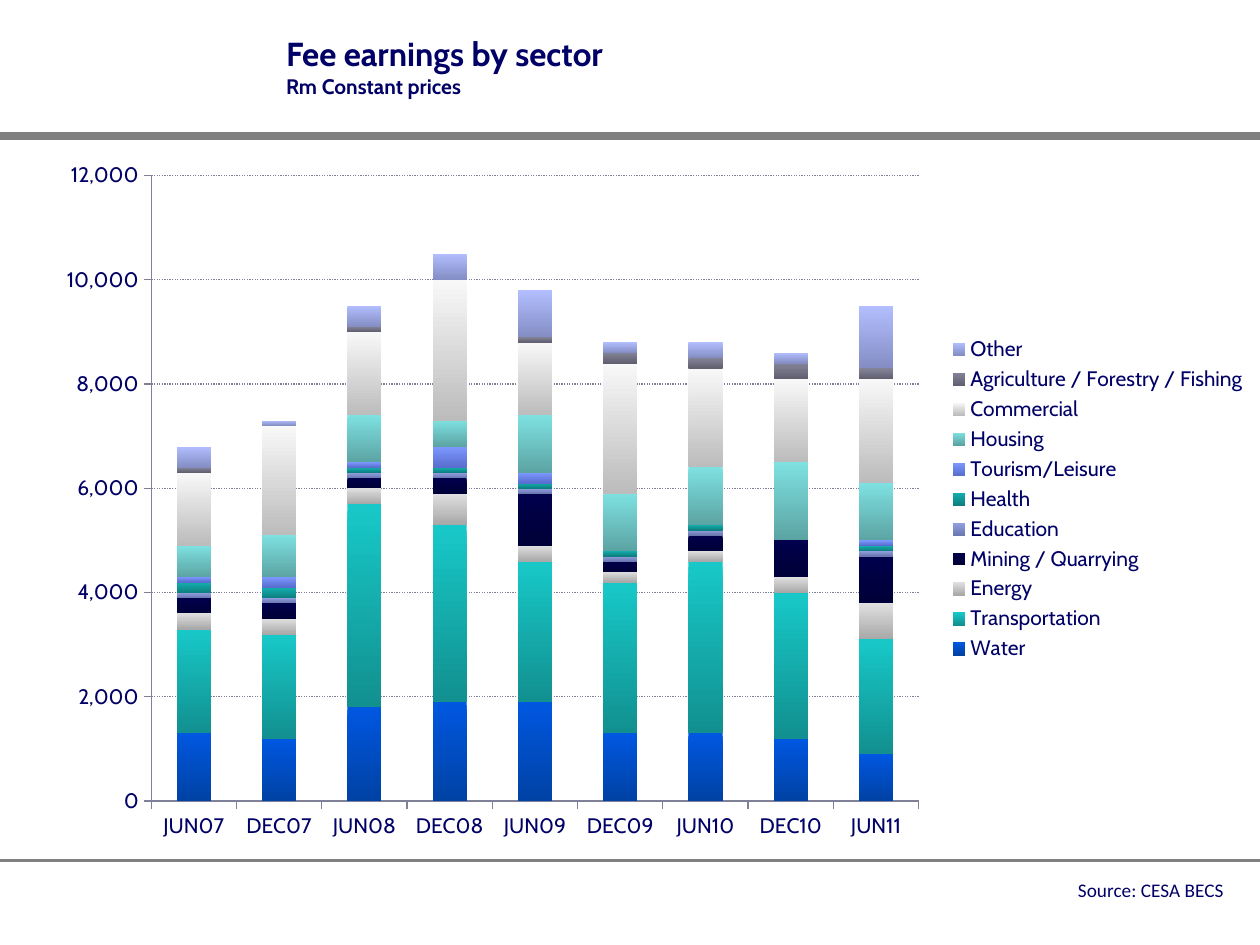
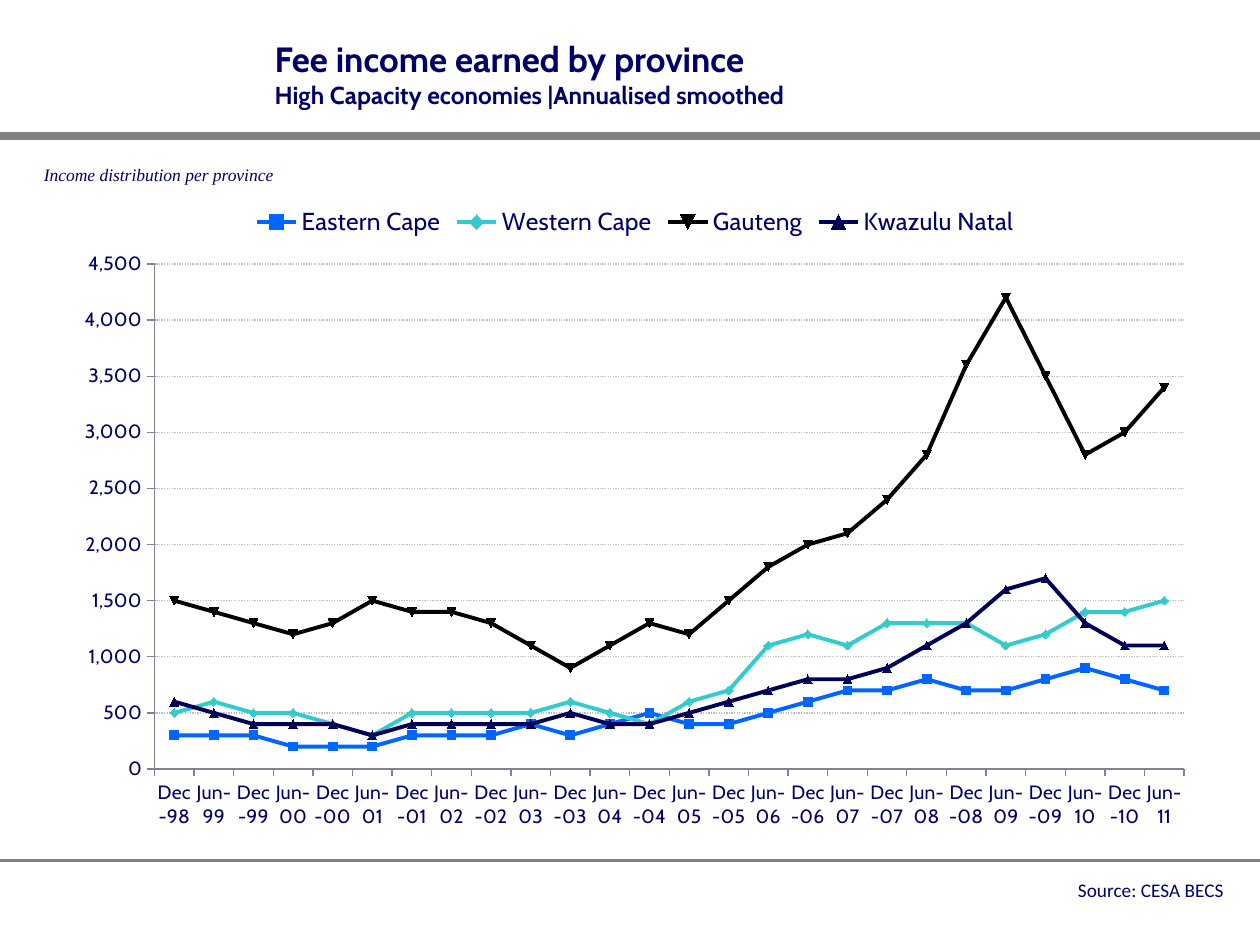
"""Build two slides on consulting fee income, by sector and by province."""
from pptx import Presentation
from pptx.chart.data import CategoryChartData
from pptx.dml.color import RGBColor
from pptx.enum.chart import XL_CHART_TYPE, XL_LEGEND_POSITION, XL_TICK_MARK
from pptx.enum.dml import MSO_LINE
from pptx.enum.shapes import MSO_CONNECTOR
from pptx.enum.text import MSO_ANCHOR, MSO_AUTO_SIZE, PP_ALIGN
from pptx.oxml import parse_xml
from pptx.oxml.ns import nsdecls, qn
from pptx.util import Inches, Pt

STACKED, LINE = XL_CHART_TYPE.COLUMN_STACKED, XL_CHART_TYPE.LINE
LEGEND_RIGHT, LEGEND_TOP = XL_LEGEND_POSITION.RIGHT, XL_LEGEND_POSITION.TOP
TICK_OUTSIDE = XL_TICK_MARK.OUTSIDE
DOTTED = MSO_LINE.ROUND_DOT
STRAIGHT = MSO_CONNECTOR.STRAIGHT
TOP, BOTTOM = MSO_ANCHOR.TOP, MSO_ANCHOR.BOTTOM
FIXED_SIZE = MSO_AUTO_SIZE.NONE
LEFT, RIGHT = PP_ALIGN.LEFT, PP_ALIGN.RIGHT

NAVY = RGBColor(0x00, 0x00, 0x66)
RULE_GREY = RGBColor(0x80, 0x80, 0x80)
AXIS_GREY = RGBColor(0x80, 0x80, 0x99)
GRID_GREY = RGBColor(0xBF, 0xBF, 0xBF)
BLUE = RGBColor(0x00, 0x66, 0xFF)
TEAL = RGBColor(0x33, 0xCC, 0xCC)
BLACK = RGBColor(0x00, 0x00, 0x00)
MIDNIGHT = RGBColor(0x00, 0x00, 0x56)

HEAD_FONT, SOURCE_FONT, NOTE_FONT = "Cabin", "Calibri", "Times New Roman"
TITLE_ONLY = 5
SLIDE_WIDTH, SLIDE_HEIGHT = 10, 7.5
RULES = [(1.08, 5), (6.83, 2)]
SOURCE_BOX = (8.44, 6.92, 1.37, 0.29)

SECTOR_PERIODS = [f"{month}{year:02}" for year in range(7, 12)
                  for month in ("JUN", "DEC")][:-1]
SECTORS = {
    "Water": [1300, 1200, 1800, 1900, 1900, 1300, 1300, 1200, 900],
    "Transportation": [2000, 2000, 3900, 3400, 2700, 2900, 3300, 2800, 2200],
    "Energy": [300, 300, 300, 600, 300, 200, 200, 300, 700],
    "Mining / Quarrying": [300, 300, 200, 300, 1000, 200, 300, 700, 900],
    "Education": [100, 100, 100, 100, 100, 100, 100, 0, 100],
    "Health": [200, 200, 100, 100, 100, 100, 100, 0, 100],
    "Tourism/Leisure": [100, 200, 100, 400, 200, 0, 0, 0, 100],
    "Housing": [600, 800, 900, 500, 1100, 1100, 1100, 1500, 1100],
    "Commercial": [1400, 2100, 1600, 2700, 1400, 2500, 1900, 1600, 2000],
    "Agriculture / Forestry / Fishing": [100, 0, 100, 0, 100, 200, 200, 300, 200],
    "Other": [400, 100, 400, 500, 900, 200, 300, 200, 1200],
}
SECTOR_SHADES = [
    (RGBColor(0x00, 0x57, 0xE0), RGBColor(0x00, 0x42, 0xA4)),
    (RGBColor(0x18, 0xC8, 0xC8), RGBColor(0x12, 0x90, 0x90)),
    (RGBColor(0xE0, 0xE0, 0xE0), RGBColor(0xA8, 0xA8, 0xA8)),
    (RGBColor(0x00, 0x00, 0x4C), RGBColor(0x00, 0x00, 0x38)),
    (RGBColor(0x94, 0xA2, 0xE6), RGBColor(0x6C, 0x78, 0xB0)),
    (RGBColor(0x14, 0xB0, 0xB0), RGBColor(0x0E, 0x80, 0x80)),
    (RGBColor(0x7C, 0x98, 0xFF), RGBColor(0x5A, 0x6E, 0xD0)),
    (RGBColor(0x7E, 0xE0, 0xE0), RGBColor(0x5C, 0xA4, 0xA4)),
    (RGBColor(0xF8, 0xF8, 0xF8), RGBColor(0xBC, 0xBC, 0xBC)),
    (RGBColor(0x84, 0x84, 0x98), RGBColor(0x60, 0x60, 0x70)),
    (RGBColor(0xB2, 0xBE, 0xFF), RGBColor(0x84, 0x8E, 0xC4)),
]

PROVINCE_PERIODS = [f"{month}-{year % 100:02}" for year in range(1998, 2012)
                    for month in ("Jun", "Dec")][1:-1]
PROVINCES = {
    "Eastern Cape": [300, 300, 300, 200, 200, 200, 300, 300, 300, 400, 300, 400, 500,
                     400, 400, 500, 600, 700, 700, 800, 700, 700, 800, 900, 800, 700],
    "Western Cape": [500, 600, 500, 500, 400, 300, 500, 500, 500, 500, 600, 500, 400,
                     600, 700, 1100, 1200, 1100, 1300, 1300, 1300, 1100, 1200, 1400,
                     1400, 1500],
    "Gauteng": [1500, 1400, 1300, 1200, 1300, 1500, 1400, 1400, 1300, 1100, 900, 1100,
                1300, 1200, 1500, 1800, 2000, 2100, 2400, 2800, 3600, 4200, 3500, 2800,
                3000, 3400],
    "Kwazulu Natal": [600, 500, 400, 400, 400, 300, 400, 400, 400, 400, 500, 400, 400,
                      500, 600, 700, 800, 800, 900, 1100, 1300, 1600, 1700, 1300, 1100,
                      1100],
}
PROVINCE_COLOURS = [BLUE, TEAL, BLACK, MIDNIGHT]


def inches(box):
    """Turn a left, top, width, height box into lengths."""
    return [Inches(side) for side in box]


def write_text(para, text, *, size, font=HEAD_FONT, bold=False, italic=False,
               align=LEFT):
    """Add one formatted span of text to a paragraph."""
    para.alignment = align
    span = para.add_run()
    span.text = text
    span.font.name, span.font.size = font, Pt(size)
    span.font.bold, span.font.italic = bold, italic
    span.font.color.rgb = NAVY


def add_label(page, box, text, **text_format):
    """Add a one-line text box."""
    frame = page.shapes.add_textbox(*inches(box)).text_frame
    frame.word_wrap = False
    write_text(frame.paragraphs[0], text, **text_format)


def add_rules(page):
    """Draw the grey rules under the heading and above the source."""
    for height, weight in RULES:
        rule = page.shapes.add_connector(STRAIGHT, *inches((0, height, SLIDE_WIDTH, height)))
        rule.line.color.rgb = RULE_GREY
        rule.line.width = Pt(weight)
        rule.element.spPr.append(parse_xml(f"<a:effectLst {nsdecls('a')}/>"))


def set_title(page, box, lines, anchor):
    """Place the title and write its heading and subheading."""
    title = page.shapes.title
    title.left, title.top, title.width, title.height = inches(box)
    frame = title.text_frame
    frame.auto_size, frame.word_wrap = FIXED_SIZE, True
    frame.vertical_anchor = anchor
    for index, (text, size) in enumerate(lines):
        para = frame.add_paragraph() if index else frame.paragraphs[0]
        para.space_before = Pt(0)
        write_text(para, text, size=size, bold=True)


def add_page(deck, title_box, lines, anchor):
    """Add a slide with the shared rules, title and source."""
    page = deck.slides.add_slide(deck.slide_layouts[TITLE_ONLY])
    add_rules(page)
    set_title(page, title_box, lines, anchor)
    add_label(page, SOURCE_BOX, "Source: CESA BECS", size=11, font=SOURCE_FONT,
              align=RIGHT)
    return page


def set_plot_area(chart, area):
    """Fix the inner plot area as fractions of the chart."""
    plot_area = chart.element.find(".//" + qn("c:plotArea"))
    for layout in plot_area.findall(qn("c:layout")):
        plot_area.remove(layout)
    sides = "".join(f'<c:{name} val="{value}"/>' for name, value in zip("xywh", area))
    plot_area.insert(0, parse_xml(
        f'<c:layout {nsdecls("c")}><c:manualLayout><c:layoutTarget val="inner"/>'
        f'<c:xMode val="edge"/><c:yMode val="edge"/>{sides}</c:manualLayout></c:layout>'))


def add_fee_chart(page, box, kind, periods, groups, *, area, size, top_value, step,
                  grid_colour, legend_place, legend_size):
    """Add a chart with the shared axis, grid and legend style."""
    data = CategoryChartData(number_format="#,##0")
    data.categories = periods
    for name, values in groups.items():
        data.add_series(name, values)
    chart = page.shapes.add_chart(kind, *inches(box), data).chart
    chart.has_title = False
    chart.font.name, chart.font.size = HEAD_FONT, Pt(size)
    chart.font.color.rgb = NAVY
    set_plot_area(chart, area)

    for axis in (chart.category_axis, chart.value_axis):
        axis.major_tick_mark = TICK_OUTSIDE
        axis.format.line.color.rgb = AXIS_GREY
        axis.format.line.width = Pt(0.75)
        axis.tick_labels.font.size = Pt(size)
    chart.element.xpath(".//c:catAx/c:txPr/a:bodyPr")[0].set("rot", "0")

    scale = chart.value_axis
    scale.minimum_scale, scale.maximum_scale, scale.major_unit = 0, top_value, step
    scale.tick_labels.number_format = "#,##0"
    scale.tick_labels.number_format_is_linked = False
    scale.has_major_gridlines = True
    grid = scale.major_gridlines.format.line
    grid.color.rgb, grid.width, grid.dash_style = grid_colour, Pt(0.75), DOTTED

    chart.has_legend = True
    chart.legend.position = legend_place
    chart.legend.include_in_layout = False
    chart.legend.font.size = Pt(legend_size)
    return chart


def add_sector_page(deck):
    """Build the slide of stacked fee earnings by sector."""
    page = add_page(deck, (2.17, 0.33, 7.25, 0.5),
                    [("Fee earnings by sector", 19), ("Rm Constant prices", 12)], BOTTOM)
    chart = add_fee_chart(page, (0.33, 1.17, 9.67, 5.58), STACKED, SECTOR_PERIODS, SECTORS,
                          area=(0.09, 0.04, 0.63, 0.89), size=12, top_value=12000,
                          step=2000, grid_colour=AXIS_GREY, legend_place=LEGEND_RIGHT,
                          legend_size=12)
    plot = chart.plots[0]
    plot.vary_by_categories = False
    plot.overlap, plot.gap_width = 100, 150
    for series, shades in zip(plot.series, SECTOR_SHADES):
        fill = series.format.fill
        fill.gradient()
        fill.gradient_angle = 270
        for stop, shade in zip(fill.gradient_stops, shades):
            stop.color.rgb = shade


def add_province_page(deck):
    """Build the slide of fee income lines by province."""
    page = add_page(deck, (2.08, 0.25, 6.83, 0.67),
                    [("Fee income earned by province", 20),
                     ("High Capacity economies |Annualised smoothed", 14)], TOP)
    add_label(page, (0.25, 1.25, 2.05, 0.27), "Income distribution per province",
              size=10, font=NOTE_FONT, italic=True)
    chart = add_fee_chart(page, (0.5, 1.53, 9.08, 5.14), LINE, PROVINCE_PERIODS, PROVINCES,
                          area=(0.08, 0.11, 0.9, 0.78), size=11, top_value=4500,
                          step=500, grid_colour=GRID_GREY, legend_place=LEGEND_TOP,
                          legend_size=14)
    plot = chart.plots[0]
    plot.vary_by_categories = False
    for series, colour in zip(plot.series, PROVINCE_COLOURS):
        series.smooth = False
        series.marker.style = None
        series.format.line.color.rgb = colour
        series.format.line.width = Pt(2.25)


def main():
    """Build and save the deck."""
    deck = Presentation()
    deck.slide_width, deck.slide_height = Inches(SLIDE_WIDTH), Inches(SLIDE_HEIGHT)
    add_sector_page(deck)
    add_province_page(deck)
    deck.save("out.pptx")


if __name__ == "__main__":
    main()
